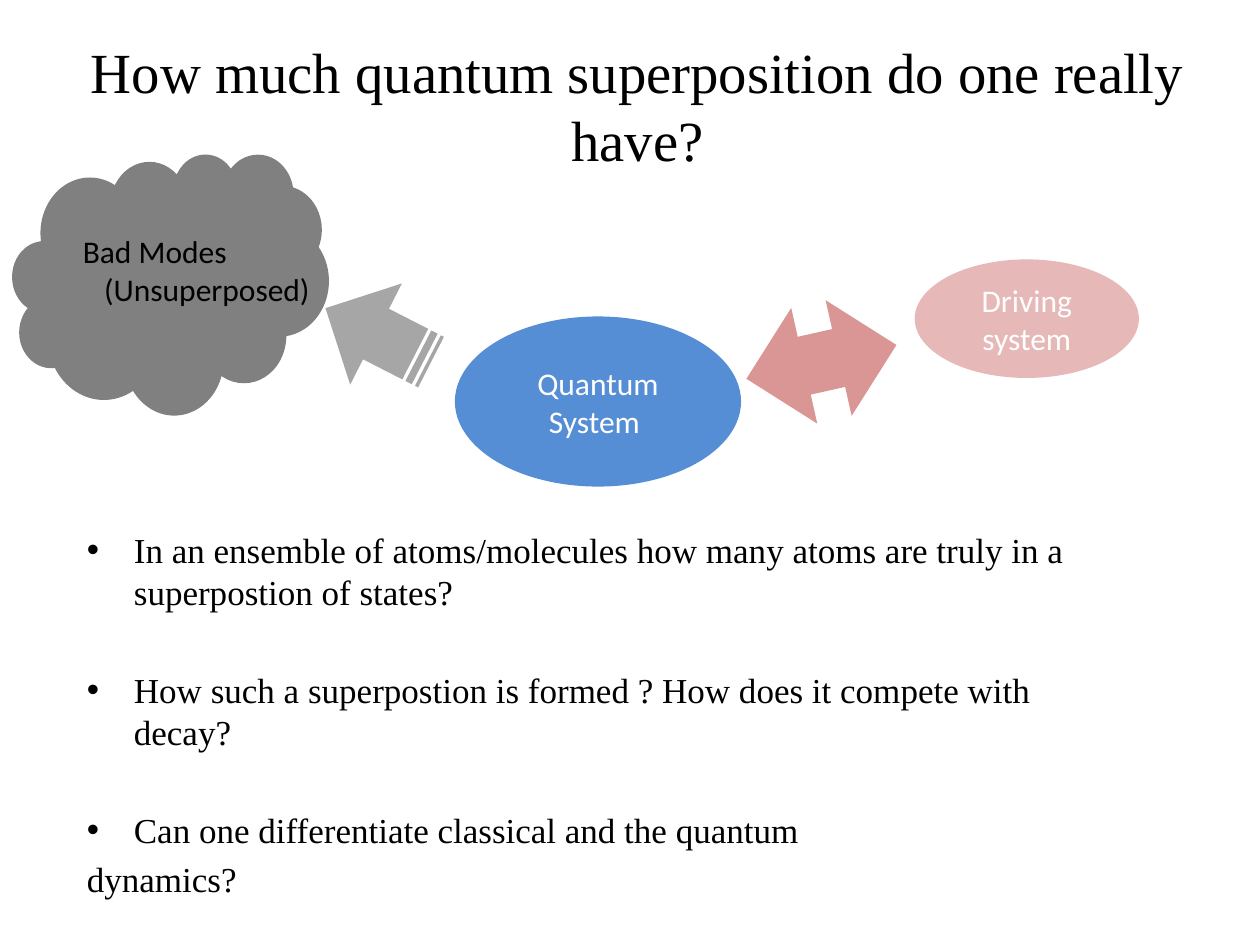
from lxml import etree
from pptx import Presentation
from pptx.dml.color import RGBColor
from pptx.enum import shapes, text
from pptx.oxml.ns import qn
from pptx.util import Cm, Pt

BLACK = RGBColor(0x00, 0x00, 0x00)
WHITE = RGBColor(0xFF, 0xFF, 0xFF)
BLUE = RGBColor(0x55, 0x8E, 0xD5)
CLOUD_GREY = RGBColor(0x80, 0x80, 0x80)
ARROW_GREY = RGBColor(0xA6, 0xA6, 0xA6)
PINK = RGBColor(0xE6, 0xB9, 0xB8)
ROSE = RGBColor(0xD9, 0x96, 0x94)
SERIF, SANS = "Times New Roman", "Calibri"
CENTER, LEFT = text.PP_ALIGN.CENTER, text.PP_ALIGN.LEFT
MIDDLE, TOP = text.MSO_ANCHOR.MIDDLE, text.MSO_ANCHOR.TOP


def write(sp, lines, font, size, color, align, anchor):
    """Fill a shape with one paragraph per line and return its paragraphs."""
    tf = sp.text_frame
    tf.word_wrap = True
    tf.vertical_anchor = anchor
    for i, line in enumerate(lines):
        p = tf.add_paragraph() if i else tf.paragraphs[0]
        p.alignment = align
        r = p.add_run()
        r.text = line
        r.font.name, r.font.size = font, Pt(size)
        r.font.color.rgb = color
    return tf.paragraphs


def add_filled(kind, box, color, rotation=0):
    sp = s.shapes.add_shape(kind, *map(Cm, box))
    sp.shadow.inherit = False
    sp.fill.solid()
    sp.fill.fore_color.rgb = color
    sp.line.fill.background()
    sp.rotation = rotation
    return sp


prs = Presentation()
prs.slide_width, prs.slide_height = Cm(25.4), Cm(19.05)
s = prs.slides.add_slide(prs.slide_layouts[6])

# Title
title = s.shapes.add_textbox(Cm(1.42), Cm(0.53), Cm(22.86), Cm(3.18))
write(title, ["How much quantum superposition do one really have?"],
      SERIF, 32.4, BLACK, CENTER, MIDDLE)

# Questions: text, bulleted, space before in points
questions = [
    ("In an ensemble of atoms/molecules how many atoms are truly in a "
     "superpostion of states?", True, 4),
    ("How such a superpostion is formed ? How does it compete with decay?", True, 32),
    ("Can one differentiate classical and the quantum", True, 32),
    ("dynamics?", False, 4),
]
body = s.shapes.add_textbox(Cm(1.5), Cm(10.52), Cm(20.8), Cm(6.6))
paragraphs = write(body, [q[0] for q in questions], SERIF, 20, BLACK, LEFT, TOP)
for p, (_, bulleted, space) in zip(paragraphs, questions):
    p.space_before = Pt(space)
    if bulleted:
        pPr = p._p.get_or_add_pPr()
        pPr.set("marL", str(Cm(0.95)))
        pPr.set("indent", str(-Cm(0.95)))
        etree.SubElement(pPr, qn("a:buFont")).set("typeface", "Arial")
        etree.SubElement(pPr, qn("a:buChar")).set("char", "•")

# Quantum system
SHAPE = shapes.MSO_SHAPE
quantum = add_filled(SHAPE.OVAL, (9.17, 6.38, 5.77, 3.43), BLUE)
write(quantum, ["Quantum", "System "], SANS, 18, WHITE, CENTER, MIDDLE)

# Bad modes
add_filled(SHAPE.CLOUD, (0.25, 3.1, 6.38, 5.26), CLOUD_GREY)
label = s.shapes.add_textbox(Cm(1.42), Cm(4.55), Cm(5.16), Cm(1.8))
paragraphs = write(label, ["Bad Modes", "(Unsuperposed)"], SANS, 18, BLACK, LEFT, TOP)
label.text_frame.word_wrap = False
paragraphs[1]._p.get_or_add_pPr().set("marL", str(Cm(0.43)))
add_filled(SHAPE.STRIPED_RIGHT_ARROW, (6.43, 5.61, 2.39, 2.29), ARROW_GREY, 207.1)

# Driving system
driving = add_filled(SHAPE.OVAL, (18.44, 5.23, 4.52, 2.39), PINK)
write(driving, ["Driving system"], SANS, 18, WHITE, CENTER, MIDDLE)
add_filled(SHAPE.LEFT_RIGHT_ARROW, (15.01, 6.1, 3.1, 2.39), ROSE, 347.3)

prs.save("out.pptx")
